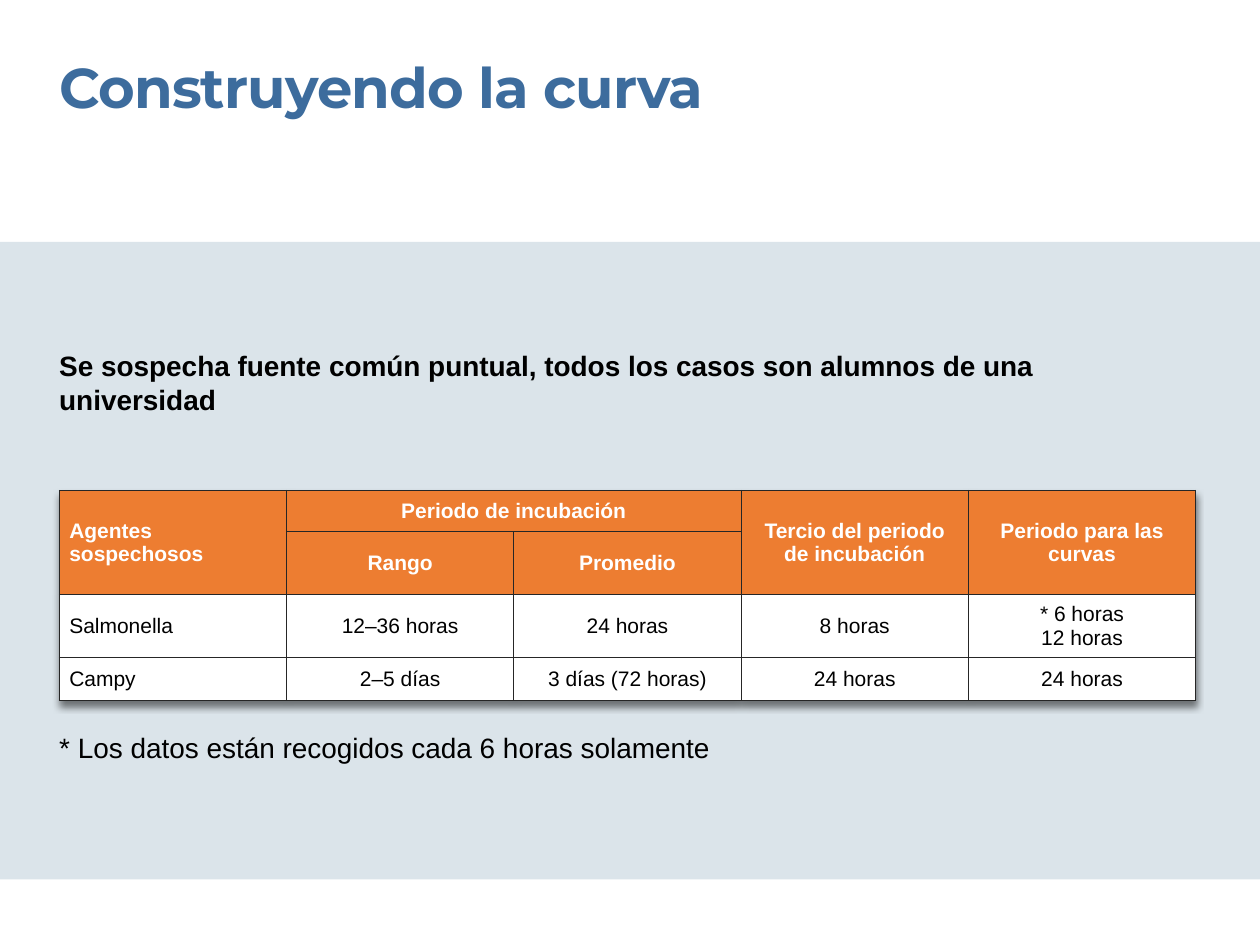
from lxml import etree
from pptx import Presentation
from pptx.dml.color import RGBColor
from pptx.enum import shapes, text
from pptx.oxml import ns
from pptx.util import Inches, Pt

BLUE = RGBColor(0x3D, 0x6C, 0x9D)
PALE = RGBColor(0xDB, 0xE4, 0xEA)
ORANGE = RGBColor(0xED, 0x7D, 0x31)
BORDER = RGBColor(0x26, 0x26, 0x26)
WHITE = RGBColor(0xFF, 0xFF, 0xFF)
BLACK = RGBColor(0, 0, 0)

LEFT, WIDTH = 0.47, 9.02
TITLE = {"name": "Montserrat", "size": Pt(32), "bold": True}
BODY = {"name": "Arial", "size": Pt(16), "bold": False}
HEADER = {"name": "Arial", "size": Pt(12), "bold": True}

LINES = [
    ("Construyendo la curva", 0.42, 8.55, 0.54, TITLE, BLUE),
    ("* Los datos están recogidos cada 6 horas solamente", 5.8, WIDTH, 0.27, BODY, BLACK),
    ("Se sospecha fuente común puntual, todos los casos son alumnos de una universidad",
     2.77, WIDTH, 0.54, BODY | {"bold": True}, BLACK),
]
INCUBATION = [
    ["Agentes sospechosos", "Periodo de incubación", "",
     "Tercio del periodo de incubación", "Periodo para las curvas"],
    ["", "Rango", "Promedio", "", ""],
    ["Salmonella", "12–36 horas", "24 horas", "8 horas", "* 6 horas\n12 horas"],
    ["Campy", "2–5 días", "3 días (72 horas)", "24 horas", "24 horas"],
]
ROW_HEIGHTS = [0.33, 0.5, 0.5, 0.34]
HEADER_ROWS = 2
MERGES = [((0, 0), (1, 0)), ((0, 1), (0, 2)), ((0, 3), (1, 3)), ((0, 4), (1, 4))]
CELL_FORMAT = {
    "margin_left": Inches(0.08), "margin_right": Inches(0.08),
    "margin_top": Inches(0.05), "margin_bottom": Inches(0.05),
    "vertical_anchor": text.MSO_ANCHOR.MIDDLE,
}
FRAME_FORMAT = {
    "margin_left": 0, "margin_right": 0, "margin_top": 0, "margin_bottom": 0,
    "word_wrap": True, "auto_size": text.MSO_AUTO_SIZE.SHAPE_TO_FIT_TEXT,
}


def apply(target, values):
    for key, value in values.items():
        setattr(target, key, value)


def style_text(frame, font, color, align=text.PP_ALIGN.LEFT):
    for paragraph in frame.paragraphs:
        paragraph.alignment = align
        for run in paragraph.runs:
            apply(run.font, font)
            run.font.color.rgb = color


def add_xml(parent, tag, **attributes):
    return etree.SubElement(parent, ns.qn(tag), attributes)


def add_borders(cell):
    properties = cell._tc.get_or_add_tcPr()
    for side in ("L", "R", "T", "B"):
        line = add_xml(properties, f"a:ln{side}", w=str(Pt(0.5)))
        add_xml(add_xml(line, "a:solidFill"), "a:srgbClr", val=str(BORDER))


def add_shadow(table):
    effects = etree.Element(ns.qn("a:effectLst"))
    shadow = add_xml(effects, "a:outerShdw", blurRad=str(Pt(4)), dist=str(Pt(3)),
                     dir="5400000", rotWithShape="0")
    add_xml(add_xml(shadow, "a:srgbClr", val=str(BLACK)), "a:alpha", val="50000")
    table._tbl.tblPr.insert(0, effects)


def add_line(slide, words, top, width, height, font, color):
    box = slide.shapes.add_textbox(Inches(LEFT), Inches(top), Inches(width), Inches(height))
    apply(box.text_frame, FRAME_FORMAT)
    box.text_frame.text = words
    style_text(box.text_frame, font, color)
    return box


def add_incubation_table(slide):
    table = slide.shapes.add_table(
        len(INCUBATION), len(INCUBATION[0]), Inches(LEFT), Inches(3.89),
        Inches(WIDTH), Inches(sum(ROW_HEIGHTS))).table
    add_shadow(table)
    for row, height in zip(table.rows, ROW_HEIGHTS):
        row.height = Inches(height)
    for r, row in enumerate(INCUBATION):
        is_header = r < HEADER_ROWS
        for c, words in enumerate(row):
            cell = table.cell(r, c)
            apply(cell, CELL_FORMAT)
            add_borders(cell)
            cell.fill.solid()
            cell.fill.fore_color.rgb = ORANGE if is_header else WHITE
            cell.text = words
            style_text(cell.text_frame, HEADER | {"bold": is_header},
                       WHITE if is_header else BLACK,
                       text.PP_ALIGN.CENTER if c else text.PP_ALIGN.LEFT)
    for first, last in MERGES:
        table.cell(*first).merge(table.cell(*last))


def main():
    deck = Presentation()
    deck.slide_width, deck.slide_height = Inches(10), Inches(7.5)
    slide = deck.slides.add_slide(deck.slide_layouts[6])
    band = slide.shapes.add_shape(
        shapes.MSO_SHAPE.RECTANGLE, 0, Inches(1.92), Inches(10), Inches(5.06))
    band.shadow.inherit = False
    band.fill.solid()
    band.fill.fore_color.rgb = PALE
    band.line.fill.background()

    title, *notes = LINES
    title_box = add_line(slide, *title)
    title_box.text_frame.paragraphs[0].runs[0]._r.get_or_add_rPr().set("spc", "-50")
    add_incubation_table(slide)
    for note in notes:
        add_line(slide, *note)
    deck.save("out.pptx")


if __name__ == "__main__":
    main()
